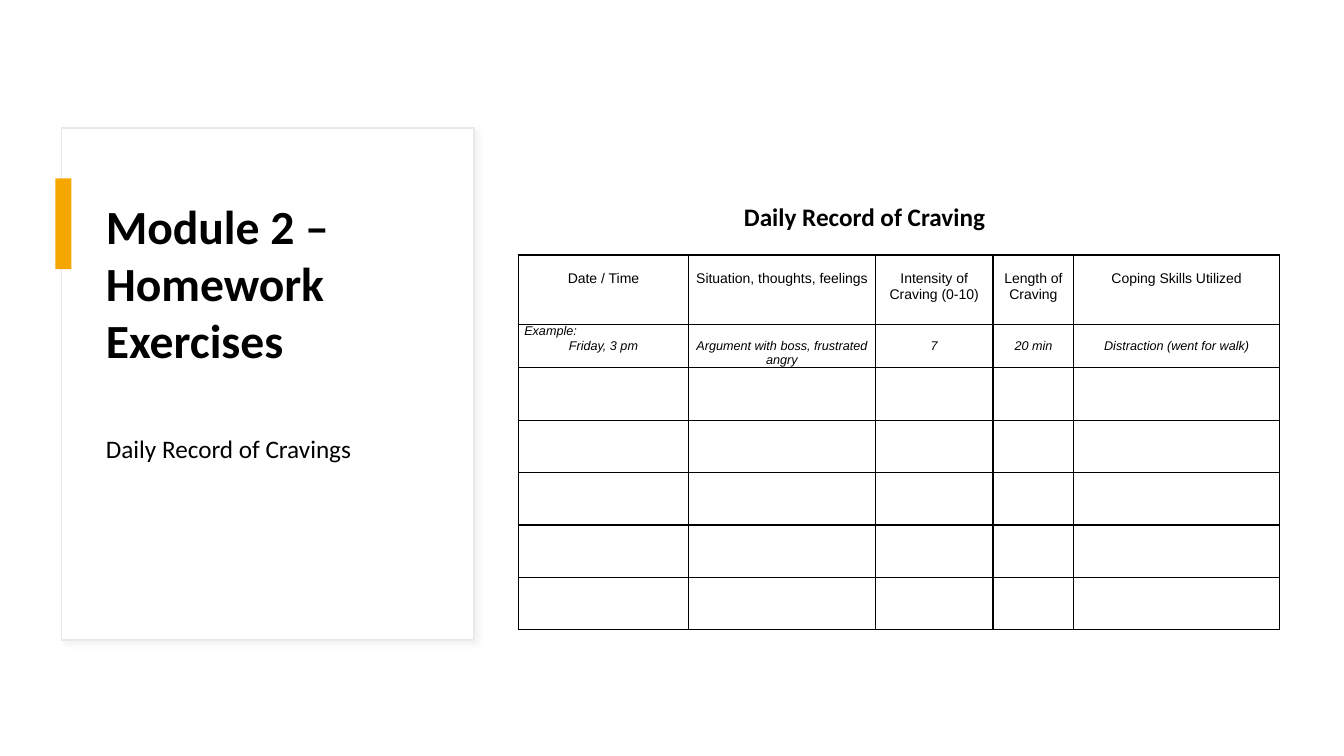
from pptx import Presentation
from pptx.dml.color import RGBColor
from pptx.enum.shapes import MSO_SHAPE
from pptx.enum.text import MSO_ANCHOR, MSO_AUTO_SIZE, PP_ALIGN
from pptx.oxml import parse_xml
from pptx.oxml.ns import nsdecls
from pptx.util import Inches, Pt

RECTANGLE = MSO_SHAPE.RECTANGLE
TOP, MIDDLE = MSO_ANCHOR.TOP, MSO_ANCHOR.MIDDLE
NO_FIT, GROW = MSO_AUTO_SIZE.NONE, MSO_AUTO_SIZE.SHAPE_TO_FIT_TEXT
LEFT, CENTER = PP_ALIGN.LEFT, PP_ALIGN.CENTER

COLORS = {
    "white": "FFFFFF",
    "black": "000000",
    "accent": "F5A700",
    "outline": "E9E9E9",
    "shadow": "D9D9D9",
}
COLUMN_WIDTHS = [1.69, 1.85, 1.17, 0.8, 2.04]
ROW_HEIGHTS = [0.69, 0.43] + [0.52] * 5
HEADERS = [
    "Date / Time",
    "Situation, thoughts, feelings",
    "Intensity of Craving (0-10)",
    "Length of Craving",
    "Coping Skills Utilized",
]
EXAMPLE = [
    "Friday, 3 pm",
    "Argument with boss, frustrated angry",
    "7",
    "20 min",
    "Distraction (went for walk)",
]


def color(name):
    return RGBColor.from_string(COLORS[name])


def write(paragraph, text, size, font="Calibri", bold=False, italic=False,
          align=LEFT, spacing=1.0):
    paragraph.alignment = align
    paragraph.line_spacing = spacing
    paragraph.space_before = Pt(0)
    run = paragraph.add_run()
    run.text = text
    run.font.name = font
    run.font.size = Pt(size)
    run.font.bold = bold
    run.font.italic = italic
    run.font.color.rgb = color("black")


def add_block(slide, left, top, width, height, fill, outline=None):
    block = slide.shapes.add_shape(
        RECTANGLE, Inches(left), Inches(top), Inches(width), Inches(height))
    block.shadow.inherit = False
    block.fill.solid()
    block.fill.fore_color.rgb = color(fill)
    if outline:
        block.line.color.rgb = color(outline)
        block.line.width = Pt(1)
    else:
        block.line.fill.background()
    return block


def add_soft_shadow(shape):
    effects = shape._element.spPr.find(
        "{http://schemas.openxmlformats.org/drawingml/2006/main}effectLst")
    effects.append(parse_xml(
        f'<a:outerShdw {nsdecls("a")} blurRad="{Pt(4)}" dist="{Pt(3)}" '
        f'dir="2700000" algn="tl" rotWithShape="0">'
        f'<a:srgbClr val="{COLORS["shadow"]}"><a:alpha val="30000"/></a:srgbClr>'
        f'</a:outerShdw>'))


def fill_placeholder(placeholder, top, height, text, anchor, top_inset=0.05, **style):
    placeholder.left, placeholder.width = Inches(0.95), Inches(3.39)
    placeholder.top, placeholder.height = Inches(top), Inches(height)
    frame = placeholder.text_frame
    frame.word_wrap = True
    frame.auto_size = NO_FIT
    frame.vertical_anchor = anchor
    frame.margin_top = Inches(top_inset)
    paragraph = frame.paragraphs[0]
    write(paragraph, text, **style)
    properties = paragraph._p.get_or_add_pPr()
    properties.set("marL", "0")
    properties.set("indent", "0")
    properties.append(parse_xml(f'<a:buNone {nsdecls("a")}/>'))
    element = placeholder._element
    element.getparent().append(element)


def format_cell(cell):
    cell.margin_left = cell.margin_right = Inches(0.06)
    cell.margin_top = cell.margin_bottom = 0
    properties = cell._tc.get_or_add_tcPr()
    for side in ("lnL", "lnR", "lnT", "lnB"):
        properties.append(parse_xml(
            f'<a:{side} {nsdecls("a")} w="{Pt(1)}"><a:solidFill>'
            f'<a:srgbClr val="{COLORS["black"]}"/></a:solidFill></a:{side}>'))
    cell.fill.background()


def add_record_table(slide):
    table = slide.shapes.add_table(
        len(ROW_HEIGHTS), len(COLUMN_WIDTHS), Inches(5.14), Inches(2.53),
        Inches(sum(COLUMN_WIDTHS)), Inches(sum(ROW_HEIGHTS))).table
    table.first_row = table.horz_banding = False
    for column, width in zip(table.columns, COLUMN_WIDTHS):
        column.width = Inches(width)
    for row, height in zip(table.rows, ROW_HEIGHTS):
        row.height = Inches(height)
    for cell in table.iter_cells():
        format_cell(cell)
    for index, (header, example) in enumerate(zip(HEADERS, EXAMPLE)):
        header_cell, example_cell = table.cell(0, index), table.cell(1, index)
        header_cell.margin_top = Inches(0.16)
        write(header_cell.text_frame.paragraphs[0], header, 10, font="Arial", align=CENTER)
        paragraph = example_cell.text_frame.paragraphs[0]
        if index == 0:
            write(paragraph, "Example:", 9, font="Arial", italic=True)
            paragraph = example_cell.text_frame.add_paragraph()
        else:
            example_cell.margin_top = Inches(0.14)
        write(paragraph, example, 9, font="Arial", italic=True, align=CENTER)


def add_caption(slide, text):
    caption = slide.shapes.add_textbox(
        Inches(7.28), Inches(1.95), Inches(3.06), Inches(0.4))
    frame = caption.text_frame
    frame.word_wrap = False
    frame.auto_size = GROW
    write(frame.paragraphs[0], text, 18, bold=True)


def main():
    presentation = Presentation()
    presentation.slide_width = Inches(13.33)
    presentation.slide_height = Inches(7.5)
    slide = presentation.slides.add_slide(presentation.slide_layouts[1])
    panel = add_block(slide, 0.61, 1.27, 4.09, 5.08, "white", "outline")
    add_soft_shadow(panel)
    add_block(slide, 0.55, 1.77, 0.16, 0.9, "accent")
    title, body = slide.placeholders
    fill_placeholder(title, 1.87, 1.87, "Module 2 – Homework Exercises", MIDDLE,
                     size=34, bold=True)
    fill_placeholder(body, 3.75, 2.26, "Daily Record of Cravings", TOP,
                     top_inset=0.52, size=18, spacing=1.1)
    add_record_table(slide)
    add_caption(slide, "Daily Record of Craving")
    presentation.save("out.pptx")


if __name__ == "__main__":
    main()
